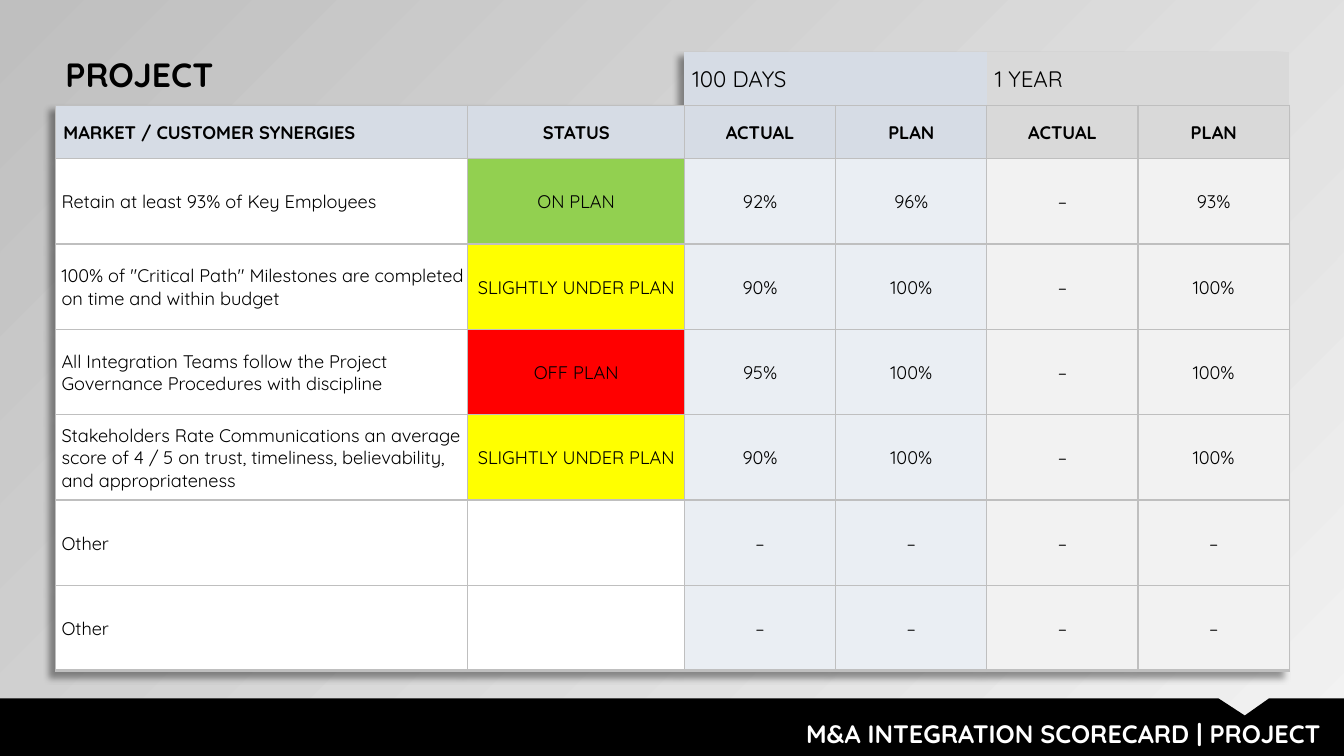
import pptx
import pptx.util
import pptx.dml.color
import pptx.enum.text
import pptx.oxml
import pptx.oxml.ns
from dataclasses import dataclass
from pptx.util import Cm

ALIGN = pptx.enum.text.PP_ALIGN
MIDDLE = pptx.enum.text.MSO_ANCHOR.MIDDLE


@dataclass(frozen=True)
class Theme:
    font: str = "Quicksand"
    black: str = "000000"
    white: str = "FFFFFF"
    border: str = "BFBFBF"
    back_light: str = "F2F2F2"
    back_dark: str = "BFBFBF"
    blue: str = "D6DCE5"
    blue_pale: str = "EAEEF3"
    grey: str = "D9D9D9"
    grey_pale: str = "F2F2F2"
    title: int = 24
    footer: int = 18
    period: int = 16
    body: int = 13


T = Theme()
STATUS_FILL = {"ON PLAN": "92D050", "SLIGHTLY UNDER PLAN": "FFFF00",
               "OFF PLAN": "FF0000", "": T.white}
COL_WIDTHS = [10.39, 5.46] + [3.81] * 4
ROW_HEIGHTS = [1.35] * 2 + [2.15] * 6
HEADERS = ["MARKET / CUSTOMER SYNERGIES", "STATUS"] + ["ACTUAL", "PLAN"] * 2
GOALS = [
    ["Retain at least 93% of Key Employees", "ON PLAN", "92%", "96%", "–", "93%"],
    ['100% of "Critical Path" Milestones are completed on time and within budget',
     "SLIGHTLY UNDER PLAN", "90%", "100%", "–", "100%"],
    ["All Integration Teams follow the Project Governance Procedures with discipline",
     "OFF PLAN", "95%", "100%", "–", "100%"],
    ["Stakeholders Rate Communications an average score of 4 / 5 on trust, "
     "timeliness, believability, and appropriateness",
     "SLIGHTLY UNDER PLAN", "90%", "100%", "–", "100%"],
    ["Other", "", "–", "–", "–", "–"],
    ["Other", "", "–", "–", "–", "–"],
]


def rgb(color):
    return pptx.dml.color.RGBColor.from_string(color)


def xml(text):
    return pptx.oxml.parse_xml(text.replace(">", " " + pptx.oxml.ns.nsdecls("a") + ">", 1))


def write(tf, text, size=T.body, color=T.black, bold=False, align=ALIGN.LEFT):
    tf.word_wrap = True
    p = tf.paragraphs[0]
    p.alignment = align
    r = p.add_run()
    r.text = text
    r.font.name = T.font
    r.font.size = pptx.util.Pt(size)
    r.font.bold = bold
    r.font.color.rgb = rgb(color)


def add_text(s, left, top, width, height, text, **fmt):
    sp = s.shapes.add_textbox(Cm(left), Cm(top), Cm(width), Cm(height))
    write(sp.text_frame, text, **fmt)


def add_background(s):
    fill = s.background.fill
    fill.gradient()
    fill.gradient_angle = 135
    for stop, position, color in zip(fill.gradient_stops, (0, 1), (T.back_light, T.back_dark)):
        stop.position = position
        stop.color.rgb = rgb(color)


def add_footer_band(s):
    points = [(0, 17.6), (30.71, 17.6), (31.37, 18.03), (31.98, 17.6),
              (33.87, 17.6), (33.87, 19.05), (0, 19.05)]
    outline = [(Cm(x), Cm(y)) for x, y in points]
    fb = s.shapes.build_freeform(*outline[0])
    fb.add_line_segments(outline[1:], close=True)
    sp = fb.convert_to_shape()
    sp.shadow.inherit = False
    sp.fill.solid()
    sp.fill.fore_color.rgb = rgb(T.black)
    sp.line.fill.background()


def set_borders(cell, widths):
    """Draw the sides named in widths (points) and clear the others."""
    tcPr = cell._tc.get_or_add_tcPr()
    for i, side in enumerate("LRTB"):
        if side in widths:
            ln = (f'<a:ln{side} w="{pptx.util.Pt(widths[side])}"><a:solidFill>'
                  f'<a:srgbClr val="{T.border}"/></a:solidFill></a:ln{side}>')
        else:
            ln = f'<a:ln{side} w="0"><a:noFill/></a:ln{side}>'
        tcPr.insert(i, xml(ln))


def fill_cell(cell, text, fill, inset=0.03, **fmt):
    cell.fill.solid()
    cell.fill.fore_color.rgb = rgb(fill)
    cell.vertical_anchor = MIDDLE
    cell.margin_left = Cm(inset)
    cell.margin_right = cell.margin_top = Cm(0.03)
    cell.margin_bottom = 0
    if text:
        write(cell.text_frame, text, **fmt)


def add_scorecard(s):
    gf = s.shapes.add_table(len(ROW_HEIGHTS), len(COL_WIDTHS), Cm(1.4), Cm(1.3),
                            Cm(sum(COL_WIDTHS)), Cm(sum(ROW_HEIGHTS)))
    table = gf.table
    table.first_row = table.horz_banding = False
    for col, width in zip(table.columns, COL_WIDTHS):
        col.width = Cm(width)
    for row, height in zip(table.rows, ROW_HEIGHTS):
        row.height = Cm(height)

    # Soft shadow to the lower left
    table._tbl.tblPr.insert(0, xml(
        '<a:effectLst><a:outerShdw blurRad="50800" dist="76200" dir="8100000">'
        '<a:srgbClr val="000000"><a:alpha val="40000"/></a:srgbClr>'
        '</a:outerShdw></a:effectLst>'))

    # Period row
    for c in range(2):
        table.cell(0, c).fill.background()
    for c, text, fill in ((2, "100 DAYS", T.blue), (4, "1 YEAR", T.grey)):
        table.cell(0, c).merge(table.cell(0, c + 1))
        fill_cell(table.cell(0, c), text, fill, inset=0.2, size=T.period)

    # Column headings
    for c, text in enumerate(HEADERS):
        fill_cell(table.cell(1, c), text, T.blue if c < 4 else T.grey,
                  inset=0.03 if c else 0.2, bold=True,
                  align=ALIGN.CENTER if c else ALIGN.LEFT)

    # Goals with status and values
    for r, goal in enumerate(GOALS, 2):
        fills = [T.white, STATUS_FILL[goal[1]]] + [T.blue_pale] * 2 + [T.grey_pale] * 2
        for c, (text, fill) in enumerate(zip(goal, fills)):
            fill_cell(table.cell(r, c), text, fill, inset=0.03 if c else 0.15,
                      align=ALIGN.CENTER if c else ALIGN.LEFT)

    # Borders
    last = len(ROW_HEIGHTS) - 1
    for r in range(last + 1):
        sides = {"B": 1} if r == 0 else {"L": 1, "R": 1, "T": 1, "B": 2.25 if r == last else 1}
        for c in range(len(COL_WIDTHS)):
            set_borders(table.cell(r, c), sides)


def main():
    prs = pptx.Presentation()
    prs.slide_width, prs.slide_height = Cm(33.87), Cm(19.05)
    s = prs.slides.add_slide(prs.slide_layouts[6])
    add_background(s)
    add_footer_band(s)
    add_text(s, 10.52, 17.98, 23.01, 1.02, "M&A INTEGRATION SCORECARD | PROJECT",
             size=T.footer, color=T.white, bold=True, align=ALIGN.RIGHT)
    add_scorecard(s)
    add_text(s, 1.4, 1.24, 20.5, 1.27, "PROJECT", size=T.title, bold=True)
    prs.save("out.pptx")


if __name__ == "__main__":
    main()
